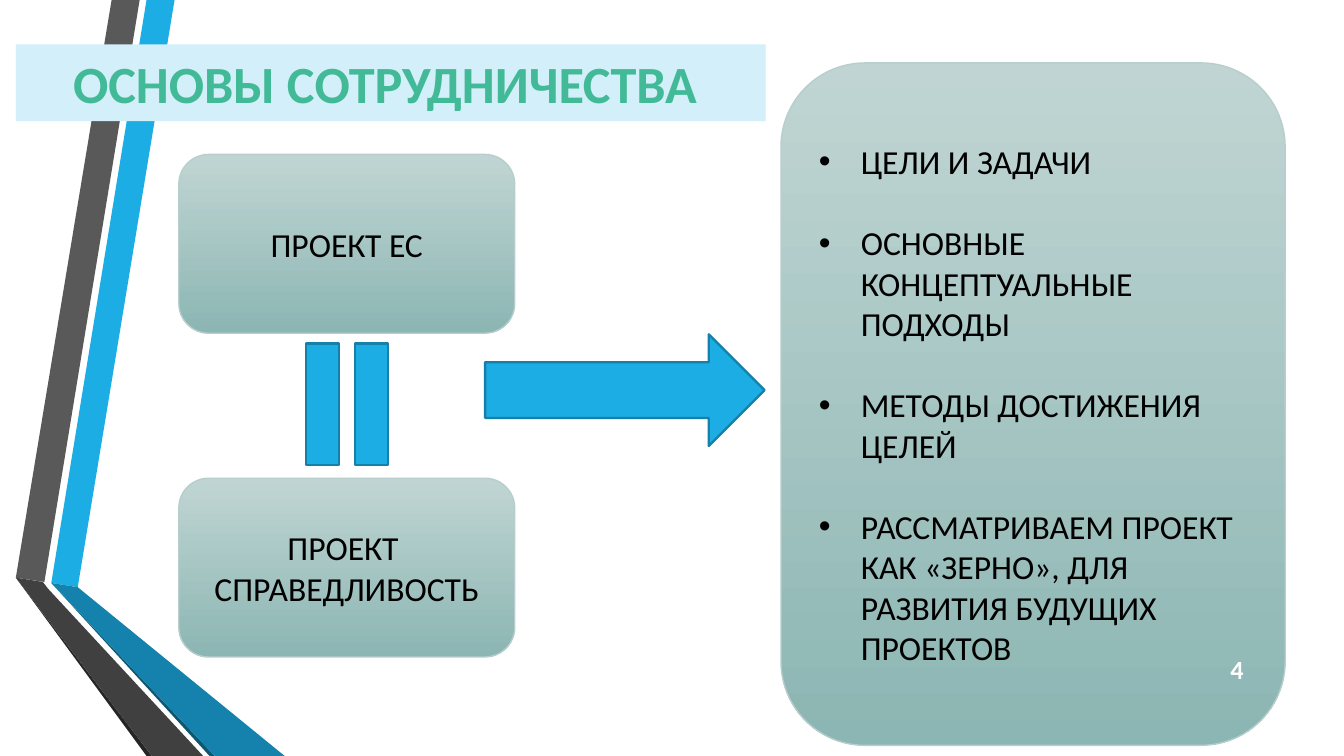
from lxml import etree
from pptx import Presentation
from pptx import util as u
from pptx.dml.color import RGBColor
from pptx.enum import shapes, text
from pptx.oxml.ns import qn

KIND = shapes.MSO_SHAPE
MID = text.MSO_ANCHOR.MIDDLE
MAIN, EDGE = "1CADE4", "1580A9"


def paint(shape, fill, line=None, width=1.25):
    """Fill with one colour, or with a top-to-bottom gradient for a pair."""
    shape.shadow.inherit = False
    if isinstance(fill, tuple):
        shape.fill.gradient()
        shape.fill.gradient_angle = 270
        for stop, tone in zip(shape.fill.gradient_stops, fill):
            stop.color.rgb = RGBColor.from_string(tone)
    else:
        shape.fill.solid()
        shape.fill.fore_color.rgb = RGBColor.from_string(fill)
    if line:
        shape.line.color.rgb = RGBColor.from_string(line)
        shape.line.width = u.Pt(width)
    else:
        shape.line.fill.background()


def write(shape, lines, size, tone, bold=False, align=text.PP_ALIGN.CENTER):
    frame = shape.text_frame
    frame.word_wrap = True
    frame.auto_size = text.MSO_AUTO_SIZE.NONE
    frame.vertical_anchor = MID
    for i, line in enumerate(lines):
        para = frame.add_paragraph() if i else frame.paragraphs[0]
        para.alignment = align
        para.space_before = u.Pt(0)
        run = para.add_run()
        run.text = line
        run.font.name = "Calibri"
        run.font.size = u.Pt(size)
        run.font.bold = bold
        run.font.color.rgb = RGBColor.from_string(tone)


deck = Presentation()
deck.slide_width, deck.slide_height = u.Cm(25.4), u.Cm(14.29)
slide = deck.slides.add_slide(deck.slide_layouts[1])
tree = slide.shapes
title, goals = slide.placeholders

# Ribbons on the left edge
ribbons = [
    (MAIN, [(0.97, 11.02), (1.47, 11.1), (3.3, 0), (2.77, 0)]),
    ("595959", [(2.64, 0), (2.11, 0), (0.3, 10.92), (0.84, 11)]),
    ("262626", [(0.3, 10.92), (2.77, 14.29), (2.87, 14.29)]),
    ("0E5772", [(0.97, 11.02), (3.96, 14.29), (4.06, 14.29)]),
    ("1482AC", [(0.97, 11.02), (4.06, 14.29), (5.38, 14.29), (1.47, 11.1)]),
    ("404040", [(3.84, 14.29), (0.91, 11.13), (0.81, 11), (0.3, 10.92),
                (2.87, 14.29)]),
]
for tone, spots in ribbons:
    spots = [(u.Cm(x), u.Cm(y)) for x, y in spots]
    path = tree.build_freeform(*spots[0])
    path.add_line_segments(spots[1:])
    paint(path.convert_to_shape(), tone)

# Two projects
sage, rim = ("C0D5D3", "8CB6B3"), "B7CECD"
for top, lines in [(2.92, ["ПРОЕКТ ЕС"]),
                   (9.04, ["ПРОЕКТ ", "СПРАВЕДЛИВОСТЬ"])]:
    box = tree.add_shape(KIND.ROUNDED_RECTANGLE, u.Cm(3.38), u.Cm(top),
                         u.Cm(6.35), u.Cm(3.38))
    paint(box, sage, rim, 0.75)
    write(box, lines, 18, "000000")

# Rounded panel with the list
goals.left, goals.top = u.Cm(14.76), u.Cm(1.19)
goals.width, goals.height = u.Cm(9.53), u.Cm(12.9)
geom = etree.SubElement(goals.element.spPr, qn("a:prstGeom"), prst="roundRect")
etree.SubElement(geom, qn("a:avLst"))
paint(goals, sage, rim, 0.75)
write(goals, [
    "ЦЕЛИ И ЗАДАЧИ",
    "ОСНОВНЫЕ КОНЦЕПТУАЛЬНЫЕ ПОДХОДЫ",
    "МЕТОДЫ ДОСТИЖЕНИЯ ЦЕЛЕЙ",
    "РАССМАТРИВАЕМ ПРОЕКТ КАК «ЗЕРНО», ДЛЯ РАЗВИТИЯ БУДУЩИХ ПРОЕКТОВ",
], 18, "000000", align=text.PP_ALIGN.LEFT)
inset = u.Cm(0.79)
for i, para in enumerate(goals.text_frame.paragraphs):
    para.space_before = u.Pt(22 if i else 0)
    props = para._p.get_or_add_pPr()
    props.set("marL", str(inset))
    props.set("indent", str(-inset))
    etree.SubElement(props, qn("a:buChar"), char="•")

# Equals sign and arrow
equal = tree.add_shape(KIND.MATH_EQUAL, u.Cm(5), u.Cm(6.32),
                       u.Cm(3.12), u.Cm(2.64))
equal.rotation = 270
arrow = tree.add_shape(KIND.RIGHT_ARROW, u.Cm(9.17), u.Cm(6.32),
                       u.Cm(5.28), u.Cm(2.11))
for sign in (equal, arrow):
    paint(sign, MAIN, EDGE)

# Title, brought in front of the ribbons
title.left, title.top = u.Cm(0.3), u.Cm(0.84)
title.width, title.height = u.Cm(14.17), u.Cm(1.45)
paint(title, "D2EFFA")
write(title, ["ОСНОВЫ СОТРУДНИЧЕСТВА "], 28, "42BA97", True)
tree.element.append(title.element)

# Slide number
page = tree.add_textbox(u.Cm(22.81), u.Cm(12.27), u.Cm(1.14), u.Cm(0.76))
write(page, ["4"], 14, "FFFFFF", True)

deck.save("out.pptx")
